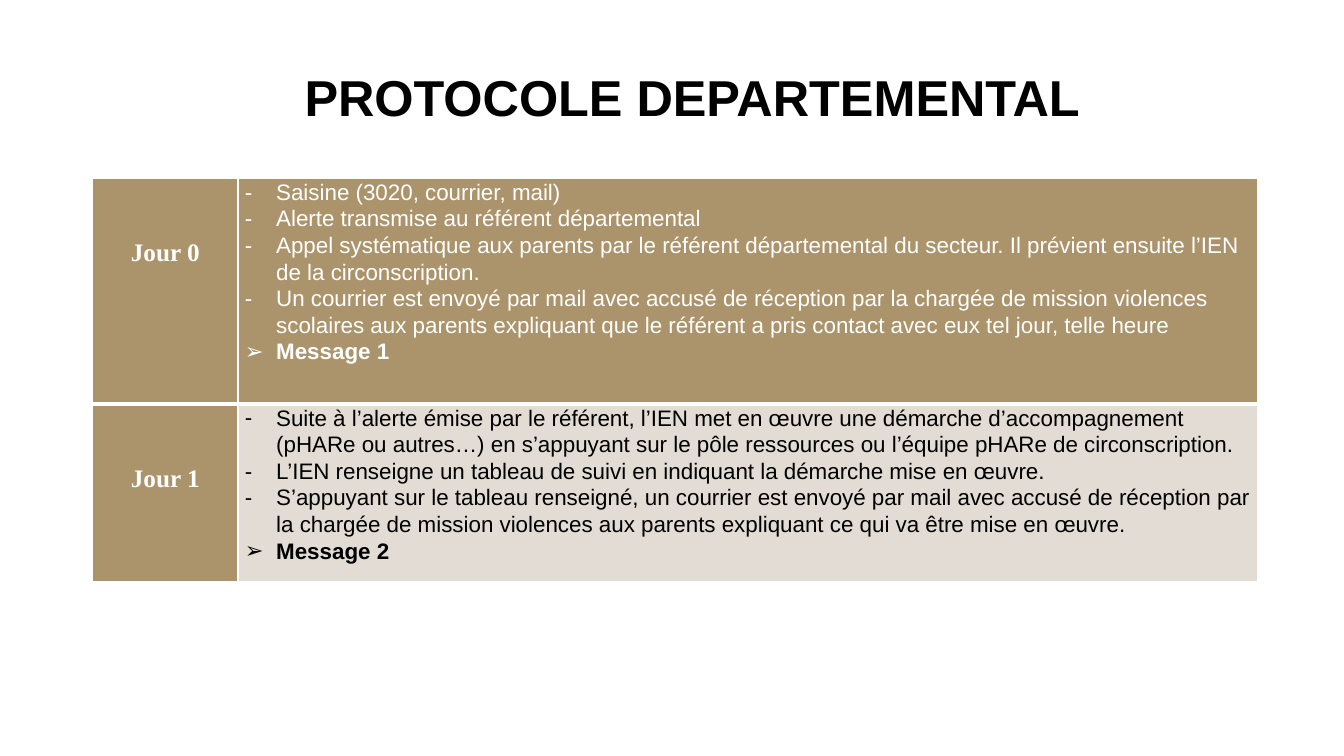
from lxml import etree
from pptx import Presentation
from pptx.dml.color import RGBColor
from pptx.enum.text import MSO_ANCHOR, PP_ALIGN
from pptx.oxml.ns import qn
from pptx.util import Inches, Pt

LEFT, CENTER = PP_ALIGN.LEFT, PP_ALIGN.CENTER
TOP = MSO_ANCHOR.TOP
WHITE, BLACK, TAN, SAND = "FFFFFF", "000000", "AB946B", "E2DCD4"
SANS, SERIF = "Arial", "Times New Roman"
SPACING = 1.07
INDENT = Inches(0.31)

# Day, steps, closing message, text colour, fill, row height
DAYS = [
    ("Jour 0", [
        "Saisine (3020, courrier, mail)",
        "Alerte transmise au référent départemental",
        "Appel systématique aux parents par le référent départemental du "
        "secteur. Il prévient ensuite l’IEN de la circonscription.",
        "Un courrier est envoyé par mail avec accusé de réception par la "
        "chargée de mission violences scolaires aux parents expliquant que "
        "le référent a pris contact avec eux tel jour, telle heure",
    ], "Message 1", WHITE, TAN, 2.24),
    ("Jour 1", [
        "Suite à l’alerte émise par le référent, l’IEN met en œuvre une "
        "démarche d’accompagnement (pHARe ou autres…) en s’appuyant sur le "
        "pôle ressources ou l’équipe pHARe de circonscription.",
        "L’IEN renseigne un tableau de suivi en indiquant la démarche mise "
        "en œuvre.",
        "S’appuyant sur le tableau renseigné, un courrier est envoyé par "
        "mail avec accusé de réception par la chargée de mission violences "
        "aux parents expliquant ce qui va être mise en œuvre.",
    ], "Message 2", BLACK, SAND, 1.76),
]


def paint(fill, color):
    fill.solid()
    fill.fore_color.rgb = RGBColor.from_string(color)


def style(para, font, size, color, bold):
    for run in para.runs:
        run.font.name = font
        run.font.size = Pt(size)
        run.font.bold = bold
        run.font.color.rgb = RGBColor.from_string(color)


def add_bullet(para, mark):
    props = para._p.get_or_add_pPr()
    props.set("marL", str(INDENT))
    props.set("indent", str(-INDENT))
    etree.SubElement(props, qn("a:buFont")).set("typeface", SANS)
    etree.SubElement(props, qn("a:buChar")).set("char", mark)


def add_border(cell, side, width):
    line = etree.SubElement(cell._tc.get_or_add_tcPr(), qn(f"a:ln{side}"))
    line.set("w", str(Pt(width)))
    fill = etree.SubElement(line, qn("a:solidFill"))
    etree.SubElement(fill, qn("a:srgbClr")).set("val", WHITE)


def format_cell(cell, color, first, last):
    cell.margin_left = cell.margin_right = Inches(0.07)
    cell.margin_top = cell.margin_bottom = 0
    cell.vertical_anchor = TOP
    widths = {"L": 1, "R": 1, "T": 1 if first else 3, "B": 1 if last else 3}
    for side, width in widths.items():
        add_border(cell, side, width)
    paint(cell.fill, color)


def fill_label(cell, text):
    cell.margin_top = Inches(0.58)
    para = cell.text_frame.paragraphs[0]
    para.text = text
    para.alignment = CENTER
    para.line_spacing = SPACING
    style(para, SERIF, 18, WHITE, True)


def fill_steps(cell, steps, message, color):
    frame = cell.text_frame
    frame.text = "\n".join(steps + [message])
    for para in frame.paragraphs:
        final = para.text == message
        add_bullet(para, "➢" if final else "-")
        para.line_spacing = SPACING
        style(para, SANS, 16, color, final)


def add_title(slide, text):
    title = slide.shapes.title
    title.left, title.top = Inches(2.92), Inches(0.61)
    title.width, title.height = Inches(8.33), Inches(0.71)
    frame = title.text_frame
    frame.text = text
    frame.word_wrap = True
    frame.vertical_anchor = TOP
    para = frame.paragraphs[0]
    para.alignment = LEFT
    style(para, SANS, 36, BLACK, True)


def add_days(slide):
    table = slide.shapes.add_table(
        len(DAYS), 2, Inches(0.92), Inches(1.77), Inches(11.55), Inches(4)
    ).table
    table.columns[0].width = Inches(1.44)
    table.columns[1].width = Inches(10.11)
    for i, (day, steps, message, color, fill, height) in enumerate(DAYS):
        table.rows[i].height = Inches(height)
        label, body = table.cell(i, 0), table.cell(i, 1)
        for cell, back in ((label, TAN), (body, fill)):
            format_cell(cell, back, i == 0, i == len(DAYS) - 1)
        fill_label(label, day)
        fill_steps(body, steps, message, color)


def main():
    deck = Presentation()
    deck.slide_width, deck.slide_height = Inches(13.33), Inches(7.5)
    slide = deck.slides.add_slide(deck.slide_layouts[5])
    paint(slide.background.fill, WHITE)
    add_title(slide, "PROTOCOLE DEPARTEMENTAL")
    add_days(slide)
    deck.save("out.pptx")


if __name__ == "__main__":
    main()
